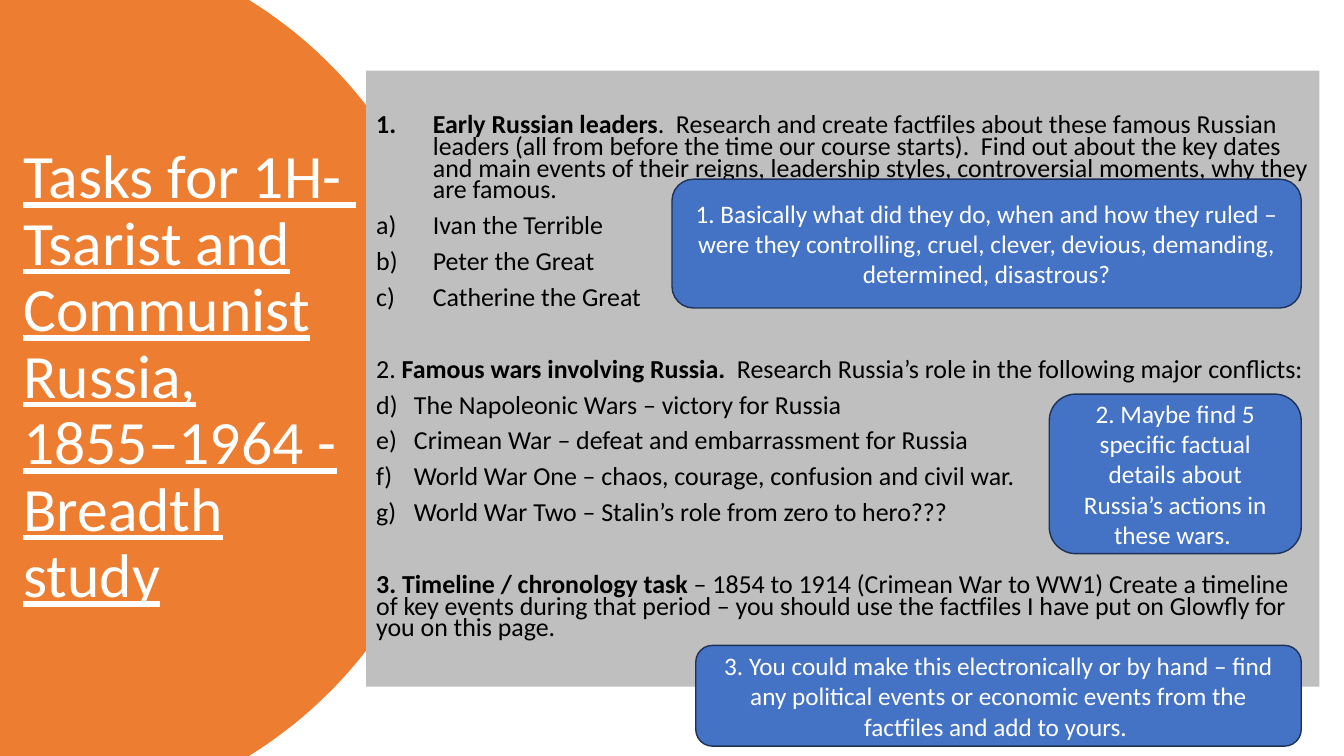
import math

import pptx
import pptx.dml.color
import pptx.enum.shapes
import pptx.enum.text
import pptx.oxml.ns
import pptx.util
from lxml import etree

Pt = pptx.util.Pt
RGBColor = pptx.dml.color.RGBColor
Align = pptx.enum.text.PP_ALIGN

WHITE = RGBColor(0xFF, 0xFF, 0xFF)
BLACK = RGBColor(0x00, 0x00, 0x00)
ORANGE = RGBColor(0xED, 0x7D, 0x31)
GREY = RGBColor(0xBF, 0xBF, 0xBF)
BLUE = RGBColor(0x44, 0x72, 0xC4)
NAVY = RGBColor(0x1E, 0x32, 0x56)

SLIDE_WIDTH, SLIDE_HEIGHT = 960, 540
TITLE_BOX = (9.5, 94.5, 252, 351.5)
TASKS_BOX = (261.5, 50.5, 681, 440)
CALLOUT_RIGHT = 929.5
SECTION_GAP = 35.8

LEADERS = ["Ivan the Terrible", "Peter the Great", "Catherine the Great"]
WARS = [
    "The Napoleonic Wars – victory for Russia",
    "Crimean War – defeat and embarrassment for Russia",
    "World War One – chaos, courage, confusion and civil war.",
    "World War Two – Stalin’s role from zero to hero???",
]
CALLOUTS = [
    (480, 128, 92, "1. Basically what did they do, when and how they ruled – were they "
     "controlling, cruel, clever, devious, demanding, determined, disastrous?"),
    (749.5, 281.5, 114, "2. Maybe find 5 specific factual details about Russia’s actions "
     "in these wars. "),
    (497, 461, 72, "3. You could make this electronically or by hand – find any political "
     "events or economic events from the factfiles and add to yours. "),
]


def place(shape, box):
    """Move a shape to a box of left, top, width and height in points."""
    shape.left, shape.top, shape.width, shape.height = [Pt(length) for length in box]


def prepare_frame(shape):
    """Wrap the text of a shape, centre it vertically and return its frame."""
    frame = shape.text_frame
    frame.word_wrap = True
    frame.auto_size = pptx.enum.text.MSO_AUTO_SIZE.NONE
    frame.vertical_anchor = pptx.enum.text.MSO_ANCHOR.MIDDLE
    return frame


def write(paragraph, text, size=18, color=WHITE, bold=False, underline=False):
    """Add a formatted run to a paragraph."""
    run = paragraph.add_run()
    run.text = text
    run.font.name = "Calibri"
    run.font.size = Pt(size)
    run.font.bold = bold
    run.font.underline = underline
    run.font.color.rgb = color


def set_layout(paragraph, alignment=Align.LEFT, line_spacing=1.0, before=0):
    """Set the alignment and spacing of a paragraph."""
    paragraph.alignment = alignment
    paragraph.line_spacing = line_spacing
    paragraph.space_before = Pt(before)
    paragraph.space_after = Pt(0)


def set_numbering(paragraph, scheme=None, start=1, indent=0):
    """Number a paragraph with a hanging indent, or clear its bullet."""
    properties = paragraph._p.get_or_add_pPr()
    properties.set("marL", str(Pt(indent)))
    properties.set("indent", str(-Pt(indent)))
    tag = "a:buAutoNum" if scheme else "a:buNone"
    bullet = etree.SubElement(properties, pptx.oxml.ns.qn(tag))
    if scheme:
        bullet.set("type", scheme)
        if start > 1:
            bullet.set("startAt", str(start))


def add_disc(slide, center_x=10.8, radius=317.5):
    """Draw the orange disc that is cut off by the slide edges."""
    middle = SLIDE_HEIGHT / 2
    limit = math.asin(middle / radius)
    steps = 80
    angles = [limit * (2 * step / steps - 1) for step in range(steps + 1)]
    points = [
        (Pt(center_x + radius * math.cos(angle)), Pt(middle + radius * math.sin(angle)))
        for angle in angles
    ]
    builder = slide.shapes.build_freeform(0, 0)
    builder.add_line_segments(points + [(0, Pt(SLIDE_HEIGHT))], close=True)
    disc = builder.convert_to_shape()
    disc.shadow.inherit = False
    disc.fill.solid()
    disc.fill.fore_color.rgb = ORANGE
    disc.line.fill.background()
    slide.shapes._spTree.insert(2, disc._element)


def fill_title(title, box):
    """Write the underlined course title."""
    place(title, box)
    paragraph = prepare_frame(title).paragraphs[0]
    set_layout(paragraph, line_spacing=0.9)
    write(paragraph, "Tasks for 1H-  Tsarist and Communist Russia, 1855–1964 - Breadth study",
          size=44, underline=True)


def fill_tasks(body, box):
    """Write the three tasks on the grey panel."""
    place(body, box)
    body.fill.solid()
    body.fill.fore_color.rgb = GREY
    frame = prepare_frame(body)

    def add_task(*parts, before=10, **numbering):
        """Add a paragraph of (text, bold) parts."""
        first = frame.paragraphs[0]
        paragraph = frame.add_paragraph() if first.runs else first
        set_layout(paragraph, line_spacing=0.7, before=before)
        set_numbering(paragraph, **numbering)
        for text, bold in parts:
            write(paragraph, text, size=18.5, color=BLACK, bold=bold)

    add_task(
        ("Early Russian leaders", True),
        (".  Research and create factfiles about these famous Russian leaders (all from "
         "before the time our course starts).  Find out about the key dates and main events "
         "of their reigns, leadership styles, controversial moments, why they are famous.",
         False),
        scheme="arabicPeriod", indent=40.5)
    for leader in LEADERS:
        add_task((leader, False), scheme="alphaLcParenR", indent=40.5)
    add_task(
        ("2. ", False),
        ("Famous wars involving Russia.  ", True),
        ("Research Russia’s role in the following major conflicts:", False),
        before=SECTION_GAP)
    for war in WARS:
        add_task((war, False), scheme="alphaLcParenR", start=len(LEADERS) + 1, indent=27)
    add_task(
        ("3. Timeline / chronology task ", True),
        ("– 1854 to 1914 (Crimean War to WW1) Create a timeline of key events during that "
         "period – you should use the factfiles I have put on Glowfly for you on this page.",
         False),
        before=SECTION_GAP)


def add_callout(slide, box, text):
    """Add a blue rounded hint box."""
    kind = pptx.enum.shapes.MSO_SHAPE.ROUNDED_RECTANGLE
    callout = slide.shapes.add_shape(kind, *[Pt(length) for length in box])
    callout.shadow.inherit = False
    callout.fill.solid()
    callout.fill.fore_color.rgb = BLUE
    callout.line.color.rgb = NAVY
    callout.line.width = Pt(1)
    paragraph = prepare_frame(callout).paragraphs[0]
    set_layout(paragraph, alignment=Align.CENTER)
    write(paragraph, text)


def main():
    """Build and save the slide."""
    presentation = pptx.Presentation()
    presentation.slide_width = Pt(SLIDE_WIDTH)
    presentation.slide_height = Pt(SLIDE_HEIGHT)
    slide = presentation.slides.add_slide(presentation.slide_layouts[1])
    add_disc(slide)
    fill_title(slide.shapes.title, TITLE_BOX)
    fill_tasks(slide.placeholders[1], TASKS_BOX)
    for left, top, height, text in CALLOUTS:
        add_callout(slide, (left, top, CALLOUT_RIGHT - left, height), text)
    presentation.save("out.pptx")


if __name__ == "__main__":
    main()
